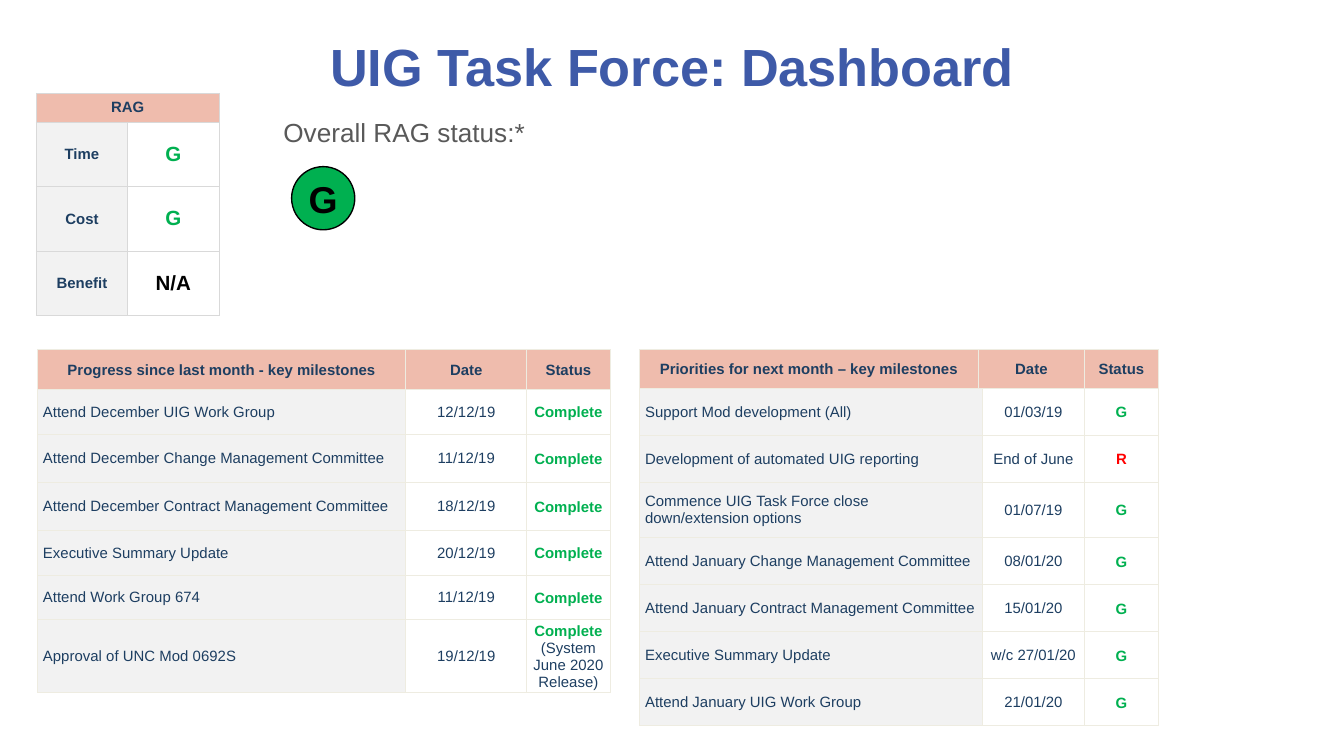
from pptx import Presentation
from pptx.dml.color import RGBColor
from pptx.enum.shapes import MSO_SHAPE as Shape
from pptx.enum.text import MSO_ANCHOR as Anchor, PP_ALIGN as Align
from pptx.oxml import parse_xml
from pptx.oxml.ns import nsdecls
from pptx.util import Inches, Pt

COLS, ROWS = 100, 56.25
NAVY, GREEN, RED, BLACK = "1D3E61", "00B050", "FF0000", "000000"
PEACH, GREY, WHITE = "EFBCAD", "F2F2F2", "FFFFFF"
SAND, SILVER = "EEECE1", "D9D9D9"
WIDE, SLIM = (0.4, 0.4, 0.4, 0.4), (0.1, 0.1, 0.1, 0)
HEAD = dict(fill=PEACH, bold=True, inset=SLIM)
NAME = dict(fill=GREY, align=Align.LEFT)
DATE = dict(fill=WHITE)
STATE = dict(fill=WHITE, bold=True, inset=SLIM)


def grid(n):
    return Inches(n * 10 / COLS)


def place(box):
    return [grid(n) for n in box]


def rgb(code):
    return RGBColor.from_string(code)


def write(frame, text, size=8, color=NAVY, bold=False, align=Align.CENTER, note=None):
    para = frame.paragraphs[0]
    para.alignment = align
    parts = [(text, color, bold)]
    if note:
        parts.append((note, NAVY, False))
    for i, (words, tint, heavy) in enumerate(parts):
        if i:
            para.add_line_break()
        run = para.add_run()
        run.text = words
        font = run.font
        font.name, font.size, font.bold = "Arial", Pt(size), heavy
        font.color.rgb = rgb(tint)


def pad(item, inset):
    sides = place(inset)
    item.margin_left, item.margin_top, item.margin_right, item.margin_bottom = sides


def edge(cell, color):
    props = cell._tc.get_or_add_tcPr()
    for i, side in enumerate("LRTB"):
        props.insert(i, parse_xml(
            f'<a:ln{side} {nsdecls("a")} w="6350"><a:solidFill>'
            f'<a:srgbClr val="{color}"/></a:solidFill></a:ln{side}>'))


def fill_cell(cell, text, fill=WHITE, inset=WIDE, anchor=Anchor.MIDDLE, **form):
    cell.fill.solid()
    cell.fill.fore_color.rgb = rgb(fill)
    cell.vertical_anchor = anchor
    pad(cell, inset)
    write(cell.text_frame, text, **form)


def add_grid(slide, box, cols, rows, line):
    table = slide.shapes.add_table(len(rows), len(cols), *place(box)).table
    table.first_row = table.horz_banding = False
    for col, width in zip(table.columns, cols):
        col.width = grid(width)
    for row, height in zip(table.rows, rows):
        row.height = grid(height)
    for cell in table.iter_cells():
        edge(cell, line)
    return table


def add_text(slide, box, text, anchor=Anchor.TOP, **form):
    frame = slide.shapes.add_textbox(*place(box)).text_frame
    frame.word_wrap = True
    frame.vertical_anchor = anchor
    write(frame, text, **form)


def add_rag(slide, box, items):
    _, _, width, height = box
    top = 2.1
    step = (height - top) / len(items)
    table = add_grid(slide, box, [width / 2] * 2, [top] + [step] * len(items), SILVER)
    table.cell(0, 0).merge(table.cell(0, 1))
    fill_cell(table.cell(0, 0), "RAG", fill=PEACH, bold=True, anchor=Anchor.TOP)
    for r, (name, mark, color) in enumerate(items, 1):
        fill_cell(table.cell(r, 0), name, fill=GREY, bold=True)
        fill_cell(table.cell(r, 1), mark, size=11, color=color, bold=True)


def add_list(slide, box, cols, rows, items, title=None):
    table = add_grid(slide, box, cols, rows, SAND)
    if title:
        for c, text in enumerate([title, "Date", "Status"]):
            fill_cell(table.cell(0, c), text, **HEAD)
    for r, (name, date, state, *note) in enumerate(items, 1 if title else 0):
        color = RED if state == "R" else GREEN
        fill_cell(table.cell(r, 0), name, **NAME)
        fill_cell(table.cell(r, 1), date, **DATE)
        fill_cell(table.cell(r, 2), state, color=color, note=note[0] if note else None, **STATE)


def add_status(slide, box):
    left, top, width, _ = box
    add_text(slide, (left, top, width, 3.4), "Overall RAG status:*",
             size=14, color="595959", align=Align.LEFT)
    disc = slide.shapes.add_shape(Shape.OVAL, *place((left + 1.6, top + 4.2, 4.7, 4.7)))
    disc.shadow.inherit = False
    disc.fill.solid()
    disc.fill.fore_color.rgb = rgb(GREEN)
    disc.line.color.rgb = rgb(BLACK)
    disc.line.width = Pt(0.75)
    frame = disc.text_frame
    frame.word_wrap = False
    frame.vertical_anchor = Anchor.MIDDLE
    pad(frame, (2.5, 0, 2.5, 0))
    write(frame, "G", size=20, color=BLACK, bold=True)


def add_next(slide, box, items):
    left, top, width, height = box
    head = 2.9
    add_list(slide, (left, top, width, head), [25.2, 7.9, 5.5], [head], [],
             "Priorities for next month – key milestones")
    add_list(slide, (left, top + head, width, height - head), [25.5, 7.6, 5.5],
             [3.5, 3.5, 4.1] + [3.5] * 4, items)


def main():
    deck = Presentation()
    deck.slide_width, deck.slide_height = grid(COLS), grid(ROWS)
    slide = deck.slides.add_slide(deck.slide_layouts[6])
    add_text(slide, (5, 1.4, 90, 7), "UIG Task Force: Dashboard",
             anchor=Anchor.MIDDLE, size=28, color="3E5AA8", bold=True)
    add_rag(slide, (2.7, 6.95, 13.6, 16.5),
            [("Time", "G", GREEN), ("Cost", "G", GREEN), ("Benefit", "N/A", BLACK)])
    add_status(slide, (20.1, 8.2, 25.2, 8.9))
    add_list(slide, (2.8, 26, 42.5, 25.4), [27.4, 9, 6.2],
             [3, 3.3, 3.6, 3.6, 3.3, 3.3, 5.1], [
                 ("Attend December UIG Work Group", "12/12/19", "Complete"),
                 ("Attend December Change Management Committee", "11/12/19", "Complete"),
                 ("Attend December Contract Management Committee", "18/12/19", "Complete"),
                 ("Executive Summary Update", "20/12/19", "Complete"),
                 ("Attend Work Group 674", "11/12/19", "Complete"),
                 ("Approval of UNC Mod 0692S", "19/12/19", "Complete",
                  "(System June 2020 Release)"),
             ], "Progress since last month - key milestones")
    add_next(slide, (47.6, 26, 38.6, 27.9), [
        ("Support Mod development (All)", "01/03/19", "G"),
        ("Development of automated UIG reporting", "End of June", "R"),
        ("Commence UIG Task Force close down/extension options", "01/07/19", "G"),
        ("Attend January Change Management Committee", "08/01/20", "G"),
        ("Attend January Contract Management Committee", "15/01/20", "G"),
        ("Executive Summary Update", "w/c 27/01/20", "G"),
        ("Attend January UIG Work Group", "21/01/20", "G"),
    ])
    deck.save("out.pptx")


if __name__ == "__main__":
    main()
